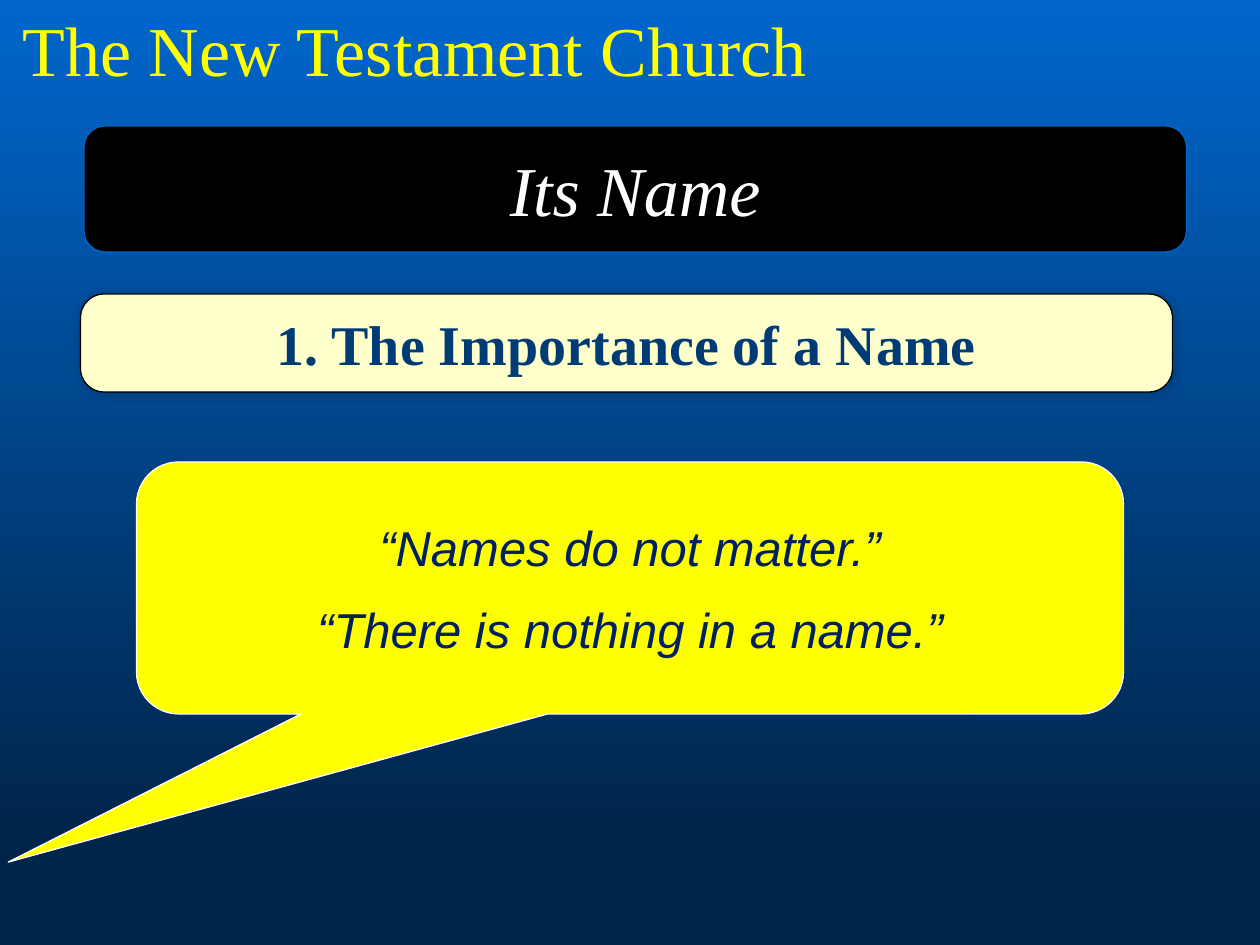
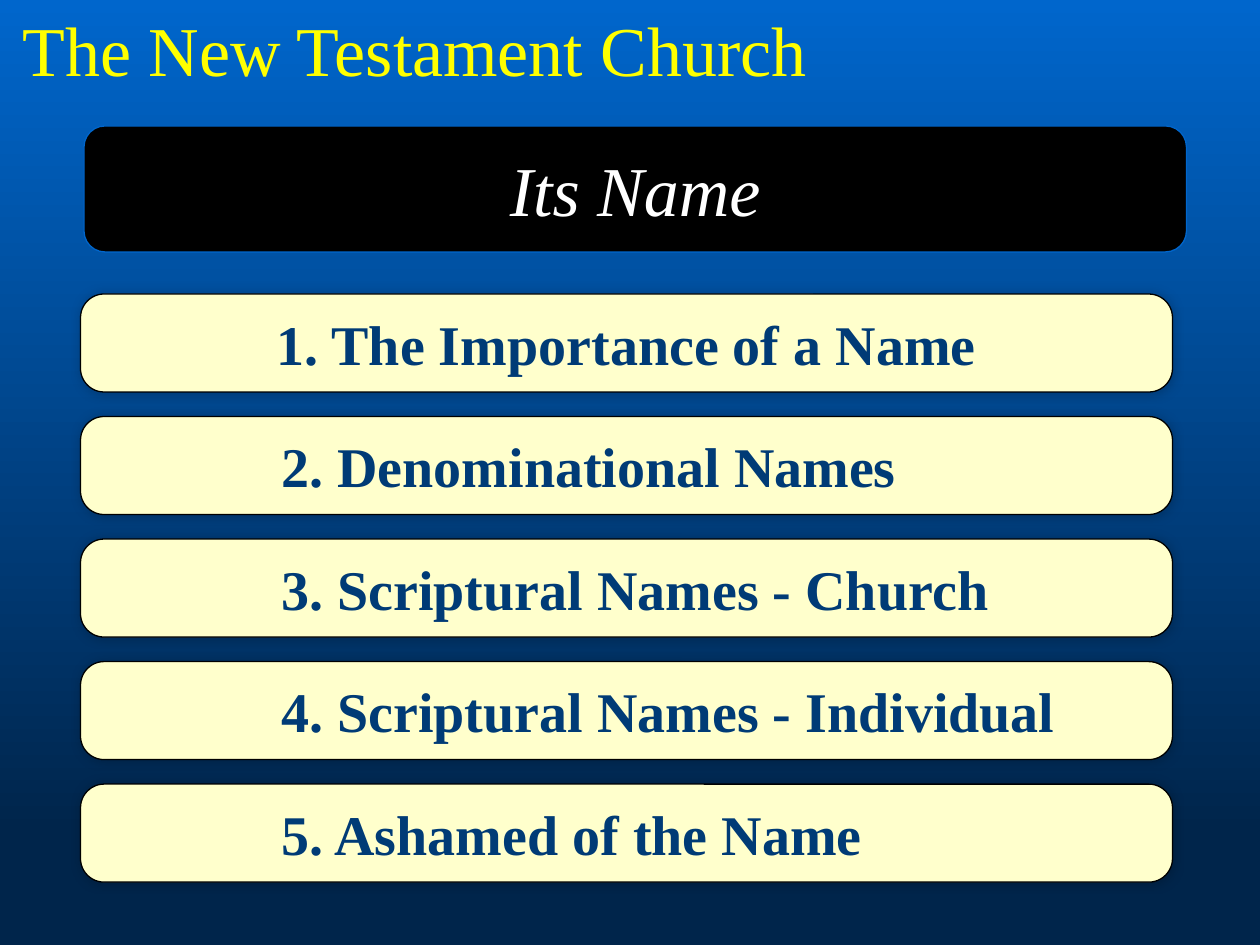
import pptx
import pptx.dml.color
import pptx.enum.shapes
import pptx.enum.text
import pptx.oxml
import pptx.oxml.ns
import pptx.util

COLOURS = {
    "sky": "0066CC", "night": "00254B", "title": "FFFF00", "banner": "000000",
    "white": "FFFFFF", "cream": "FFFFCC", "navy": "003B76", "quote": "002060",
}
SERIF, SANS = "Times New Roman", "Arial"
COLUMNS, ROWS = 120, 90
BAR_TOP, BAR_PITCH = 28, 11.67
POINTS = ["The Importance of a Name", "Denominational Names", "Scriptural Names - Church",
          "Scriptural Names - Individual", "Ashamed of the Name"]
SHAPES = pptx.enum.shapes.MSO_SHAPE
ALIGN = pptx.enum.text.PP_ALIGN


def colour(name):
    return pptx.dml.color.RGBColor.from_string(COLOURS[name])


class Page:
    """One slide with the shared style, measured on a grid of columns and rows."""

    def __init__(self, deck):
        self.deck = deck
        self.slide = deck.slides.add_slide(deck.slide_layouts[5])
        fill = self.slide.background.fill
        fill.gradient()
        fill.gradient_angle = 270
        for stop, name, position in zip(fill.gradient_stops, ("sky", "night"), (0, 0.88)):
            stop.color.rgb = colour(name)
            stop.position = position

    def place(self, left, top, width, height):
        column = self.deck.slide_width / COLUMNS
        row = self.deck.slide_height / ROWS
        return [round(share) for share in
                (left * column, top * row, width * column, height * row)]

    def set_text(self, frame, lines, font, size, ink, bold=False, italic=False,
                 align=ALIGN.CENTER, gap=0):
        frame.text = "\n".join(lines)
        for index, para in enumerate(frame.paragraphs):
            para.alignment = align
            para.space_before = pptx.util.Pt(gap if index else 0)
            para.font.name, para.font.size = font, pptx.util.Pt(size)
            para.font.bold, para.font.italic = bold, italic
            para.font.color.rgb = colour(ink)

    def title(self, text):
        box = self.slide.shapes.title
        box.left, box.top, box.width, box.height = self.place(0.5, 0, 78, 9.25)
        frame = box.text_frame
        self.set_text(frame, [text], SERIF, 40, "title")
        frame.word_wrap = False
        frame.auto_size = pptx.enum.text.MSO_AUTO_SIZE.SHAPE_TO_FIT_TEXT
        frame.vertical_anchor = pptx.enum.text.MSO_ANCHOR.TOP
        # Thin outline around the letters
        for span in frame.paragraphs[0].runs:
            span.font.color.rgb = colour("title")
            span.font._element.insert(0, pptx.oxml.parse_xml(
                f'<a:ln {pptx.oxml.ns.nsdecls("a")} w="9525"><a:solidFill>'
                f'<a:srgbClr val="{COLOURS["sky"]}"/></a:solidFill></a:ln>'))

    def box(self, kind, place, fill, line, adjustments=()):
        shape = self.slide.shapes.add_shape(kind, *self.place(*place))
        shape.shadow.inherit = False
        shape.fill.solid()
        shape.fill.fore_color.rgb = colour(fill)
        shape.line.color.rgb = colour(line)
        shape.line.width = pptx.util.Pt(0.75)
        for index, value in enumerate(adjustments):
            shape.adjustments[index] = value
        shape.text_frame.word_wrap = True
        shape.text_frame.vertical_anchor = pptx.enum.text.MSO_ANCHOR.MIDDLE
        return shape

    def banner(self, text):
        shape = self.box(SHAPES.ROUNDED_RECTANGLE, (8, 12, 105, 12), "banner", "sky")
        self.set_text(shape.text_frame, [text], SERIF, 40, "white", italic=True)

    def bar(self, index):
        top = BAR_TOP + index * BAR_PITCH
        shape = self.box(SHAPES.ROUNDED_RECTANGLE, (7.67, top, 104, 9.33),
                         "cream", "banner", [0.241])
        # Soft shadow
        effects = shape._element.spPr.find(pptx.oxml.ns.qn("a:effectLst"))
        effects.append(pptx.oxml.parse_xml(
            f'<a:outerShdw {pptx.oxml.ns.nsdecls("a")} blurRad="76200" dist="0" dir="13500000">'
            f'<a:srgbClr val="{COLOURS["banner"]}"><a:alpha val="20000"/></a:srgbClr>'
            '</a:outerShdw>'))
        # The first point is centred, the others share a left edge
        if index:
            shape.text_frame.margin_left = pptx.util.Inches(1.54)
        self.set_text(shape.text_frame, [f"{index + 1}. {POINTS[index]}"], SERIF, 32, "navy",
                      bold=True, align=ALIGN.LEFT if index else ALIGN.CENTER)

    def callout(self, lines):
        shape = self.box(SHAPES.ROUNDED_RECTANGULAR_CALLOUT, (13, 44, 94, 24),
                         "title", "white", [-0.63, 1.088, 0.167])
        self.set_text(shape.text_frame, lines, SANS, 28, "quote", italic=True, gap=13.5)


def church_page(deck, bar_count):
    page = Page(deck)
    page.title("The New Testament Church")
    page.banner("Its Name")
    for index in range(bar_count):
        page.bar(index)
    return page


def main():
    deck = pptx.Presentation()
    deck.slide_width, deck.slide_height = pptx.util.Inches(10), pptx.util.Inches(7.5)

    # First point, with common sayings
    page = church_page(deck, 1)
    page.callout(["“Names do not matter.”", "“There is nothing in a name.”"])

    # All points
    church_page(deck, len(POINTS))

    deck.save("out.pptx")


if __name__ == "__main__":
    main()
